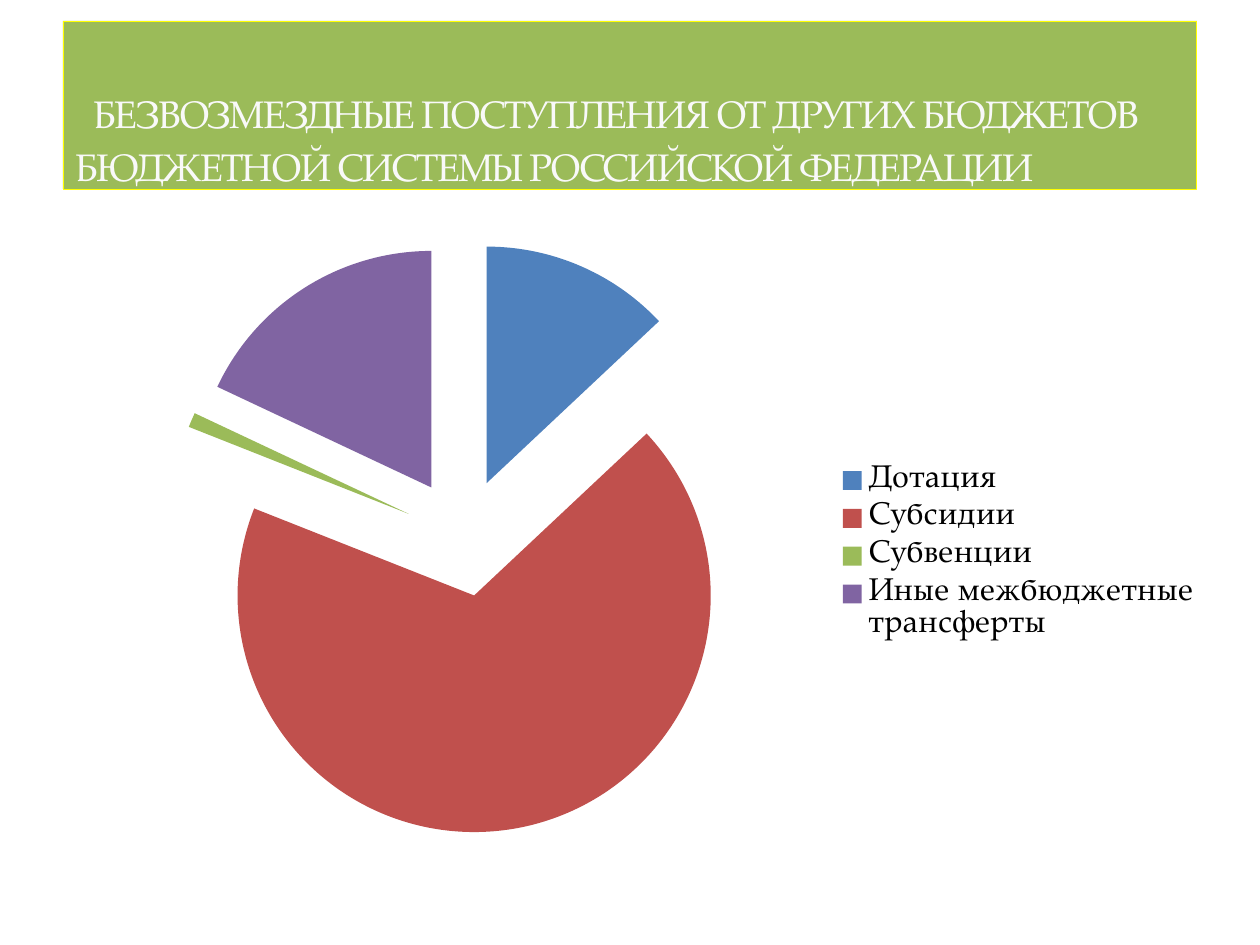
from dataclasses import dataclass

from lxml.etree import SubElement
from pptx import Presentation
from pptx.chart.data import CategoryChartData
from pptx.dml.color import RGBColor
from pptx.enum.chart import XL_CHART_TYPE, XL_LEGEND_POSITION
from pptx.enum.shapes import MSO_SHAPE
from pptx.enum.text import MSO_ANCHOR, PP_ALIGN
from pptx.oxml import parse_xml
from pptx.oxml.ns import nsdecls, qn
from pptx.util import Pt

PX = 914400 // 126


@dataclass(frozen=True)
class Theme:
    """Colours, font and type sizes of the slide."""

    font: str = "TeX Gyre Pagella"
    banner: str = "9BBB59"
    banner_line: str = "FFFF00"
    title: str = "F9F9F9"
    title_outline: str = "D2D0C7"
    legend: str = "000000"
    slices: tuple = ("4F81BD", "C0504D", "9BBB59", "8064A2")
    title_size: int = 22
    lead_size: int = 42
    legend_size: int = 18


THEME = Theme()
TITLE = "БЕЗВОЗМЕЗДНЫЕ ПОСТУПЛЕНИЯ ОТ ДРУГИХ БЮДЖЕТОВ БЮДЖЕТНОЙ СИСТЕМЫ РОССИЙСКОЙ ФЕДЕРАЦИИ"
TRANSFERS = {"Дотация": 13, "Субсидии": 68, "Субвенции": 1, "Иные межбюджетные трансферты": 18}
PLOT_LAYOUT = {"x": 0.076, "y": 0.006, "w": 0.522, "h": 0.939}


def px(*lengths):
    """Turn pixel lengths into EMU."""
    return [length * PX for length in lengths]


def colour(value):
    """Return an RGB colour from its hex value."""
    return RGBColor.from_string(value)


def style_title_run(run, size):
    """Set size, tight spacing and a faint outline on a title run."""
    run.font.size = Pt(size)
    properties = run.font._element
    properties.set("spc", "-100")
    properties.insert(0, parse_xml(
        f'<a:ln {nsdecls("a")} w="3175"><a:solidFill><a:srgbClr val="{THEME.title_outline}">'
        '<a:alpha val="25000"/></a:srgbClr></a:solidFill><a:prstDash val="solid"/></a:ln>'))


def add_banner(slide, left, top, width, height):
    """Add the filled title banner."""
    banner = slide.shapes.add_shape(MSO_SHAPE.RECTANGLE, *px(left, top, width, height))
    banner.shadow.inherit = False
    banner.fill.solid()
    banner.fill.fore_color.rgb = colour(THEME.banner)
    banner.line.color.rgb = colour(THEME.banner_line)
    banner.line.width = Pt(0.5)
    frame = banner.text_frame
    frame.word_wrap = True
    frame.vertical_anchor = MSO_ANCHOR.BOTTOM
    frame.margin_bottom = 0
    paragraph = frame.paragraphs[0]
    paragraph.alignment = PP_ALIGN.LEFT
    paragraph.font.name = THEME.font
    paragraph.font.color.rgb = colour(THEME.title)
    for text, size in ((" ", THEME.lead_size), (TITLE, THEME.title_size)):
        run = paragraph.add_run()
        run.text = text
        run.font.name = THEME.font
        run.font.color.rgb = colour(THEME.title)
        style_title_run(run, size)


def set_plot_layout(chart):
    """Fix the inner plot area as fractions of the chart."""
    plot_area = chart._chartSpace.chart.plotArea
    for layout in plot_area.findall(qn("c:layout")):
        plot_area.remove(layout)
    layout = parse_xml(f'<c:layout {nsdecls("c")}/>')
    manual = SubElement(layout, qn("c:manualLayout"))
    settings = {"layoutTarget": "inner", "xMode": "edge", "yMode": "edge", **PLOT_LAYOUT}
    for name, value in settings.items():
        SubElement(manual, qn(f"c:{name}")).set("val", str(value))
    plot_area.insert(0, layout)


def add_pie(slide, left, top, width, height):
    """Add the exploded pie chart with its legend."""
    data = CategoryChartData()
    data.categories = list(TRANSFERS)
    data.add_series("Series 1", list(TRANSFERS.values()))
    chart = slide.shapes.add_chart(
        XL_CHART_TYPE.PIE, *px(left, top, width, height), data).chart
    chart.has_title = False
    chart.font.name = THEME.font
    chart.font.size = Pt(THEME.legend_size)
    chart.font.color.rgb = colour(THEME.legend)
    chart.has_legend = True
    chart.legend.position = XL_LEGEND_POSITION.RIGHT
    chart.legend.include_in_layout = False
    plot = chart.plots[0]
    plot.vary_by_categories = True
    series = plot.series[0]
    for index, value in enumerate(THEME.slices):
        fill = series.points[index].format.fill
        fill.solid()
        fill.fore_color.rgb = colour(value)
    first_point = series._element.find(qn("c:dPt"))
    first_point.addprevious(parse_xml(f'<c:explosion {nsdecls("c")} val="25"/>'))
    set_plot_layout(chart)


def main():
    """Build and save the slide."""
    presentation = Presentation()
    presentation.slide_width, presentation.slide_height = px(1260, 945)
    slide = presentation.slides.add_slide(presentation.slide_layouts[6])
    add_pie(slide, 81, 238, 1134, 630)
    add_banner(slide, 63, 21, 1134, 168)
    presentation.save("out.pptx")


if __name__ == "__main__":
    main()
